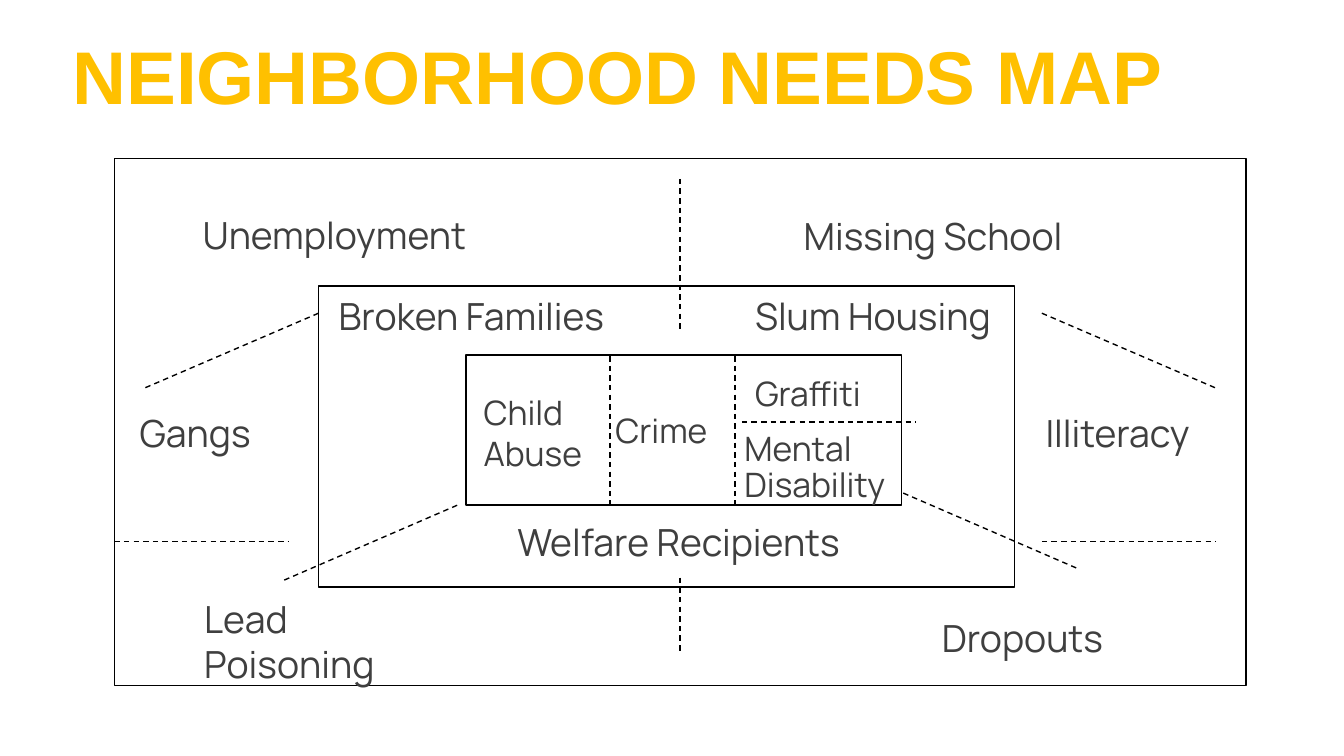
from dataclasses import dataclass

from lxml import etree
from pptx import Presentation
from pptx.dml.color import RGBColor
from pptx.enum.dml import MSO_LINE
from pptx.enum.shapes import MSO_CONNECTOR, MSO_SHAPE
from pptx.enum.text import MSO_ANCHOR, MSO_AUTO_SIZE, PP_ALIGN
from pptx.oxml.ns import qn
from pptx.util import Cm, Pt

RECTANGLE = MSO_SHAPE.RECTANGLE
STRAIGHT = MSO_CONNECTOR.STRAIGHT
DASH = MSO_LINE.DASH
MIDDLE = MSO_ANCHOR.MIDDLE
LEFT = PP_ALIGN.LEFT
NO_AUTOFIT = MSO_AUTO_SIZE.NONE
GROW = MSO_AUTO_SIZE.SHAPE_TO_FIT_TEXT


@dataclass(frozen=True)
class Theme:
    title_color: RGBColor = RGBColor(0xFF, 0xC0, 0x00)
    text_color: RGBColor = RGBColor(0x3F, 0x3F, 0x3F)
    line_color: RGBColor = RGBColor(0x00, 0x00, 0x00)
    fill_color: RGBColor = RGBColor(0xFF, 0xFF, 0xFF)
    title_font: str = "Arial"
    text_font: str = "Manrope"
    title_size: Pt = Pt(40)
    outer_size: Pt = Pt(20)
    inner_size: Pt = Pt(18)
    line_width: Pt = Pt(0.75)


theme = Theme()


def style_font(font, name, size, color):
    font.name = name
    font.size = size
    font.color.rgb = color


def style_line(line):
    line.color.rgb = theme.line_color
    line.width = theme.line_width


deck = Presentation()
deck.slide_width = Cm(25.4)
deck.slide_height = Cm(14.29)
page = deck.slides.add_slide(deck.slide_layouts[5])

title = page.shapes.title
title.left, title.top, title.width, title.height = Cm(1.12), Cm(0.61), Cm(23.67), Cm(1.6)
title.text_frame.text = "NEIGHBORHOOD NEEDS MAP"
title.text_frame.auto_size = NO_AUTOFIT
title.text_frame.vertical_anchor = MIDDLE
heading = title.text_frame.paragraphs[0]
heading.alignment = LEFT
heading.font.bold = True
style_font(heading.font, theme.title_font, theme.title_size, theme.title_color)

needs_map = page.shapes.add_group_shape().shapes

nested_frames = [
    (2.16, 3.0, 21.39, 9.96),
    (6.02, 5.41, 13.16, 5.69),
    (8.81, 6.71, 8.23, 2.84),
]
for frame in nested_frames:
    box = needs_map.add_shape(RECTANGLE, *map(Cm, frame))
    box.shadow.inherit = False
    box.fill.solid()
    box.fill.fore_color.rgb = theme.fill_color
    style_line(box.line)

outer, inner = theme.outer_size, theme.inner_size
labels = [
    ("Lead Poisoning", 3.61, 11.15, 4.93, 1.42, outer, 1.0),
    ("Dropouts", 17.55, 11.51, 4.93, 1.42, outer, 1.0),
    ("Unemployment", 3.58, 3.89, 8.23, 1.42, outer, 1.0),
    ("Gangs", 2.39, 7.62, 4.93, 1.42, outer, 1.0),
    ("Illiteracy", 19.51, 7.62, 4.93, 1.42, outer, 1.0),
    ("Missing School", 14.94, 3.91, 8.23, 1.42, outer, 1.0),
    ("Broken Families", 6.15, 5.41, 6.58, 1.42, outer, 1.0),
    ("Slum Housing", 14.02, 5.41, 6.58, 1.42, outer, 1.0),
    ("Welfare Recipients", 9.53, 9.68, 8.23, 1.42, outer, 1.0),
    ("Child Abuse", 8.89, 7.29, 3.28, 1.42, inner, 1.0),
    ("Crime", 11.38, 7.62, 3.28, 1.42, inner, 1.0),
    ("Mental Disability", 13.82, 8.05, 3.68, 1.65, inner, 0.9),
    ("Graffiti", 14.02, 6.93, 3.28, 1.02, inner, 1.0),
]
for text, left, top, width, height, size, spacing in labels:
    box = needs_map.add_textbox(Cm(left), Cm(top), Cm(width), Cm(height))
    box.text_frame.text = text
    box.text_frame.word_wrap = True
    box.text_frame.auto_size = GROW
    para = box.text_frame.paragraphs[0]
    para.line_spacing = spacing
    style_font(para.font, theme.text_font, size, theme.text_color)

dividers = [
    (12.85, 3.38, 12.85, 6.22),
    (2.16, 10.24, 5.46, 10.24),
    (19.69, 10.24, 22.99, 10.24),
    (12.85, 10.92, 12.85, 12.34),
    (8.64, 9.55, 5.36, 10.97),
    (17.07, 9.32, 20.35, 10.74),
    (11.53, 6.73, 11.53, 9.58),
    (13.89, 6.73, 13.89, 9.58),
    (6.02, 5.92, 2.72, 7.34),
    (19.69, 5.92, 22.99, 7.34),
    (14.02, 7.98, 17.32, 7.98),
]
for ends in dividers:
    divider = needs_map.add_connector(STRAIGHT, *map(Cm, ends))
    style_line(divider.line)
    divider.line.dash_style = DASH
    etree.SubElement(divider._element.spPr, qn("a:effectLst"))

deck.save("out.pptx")
